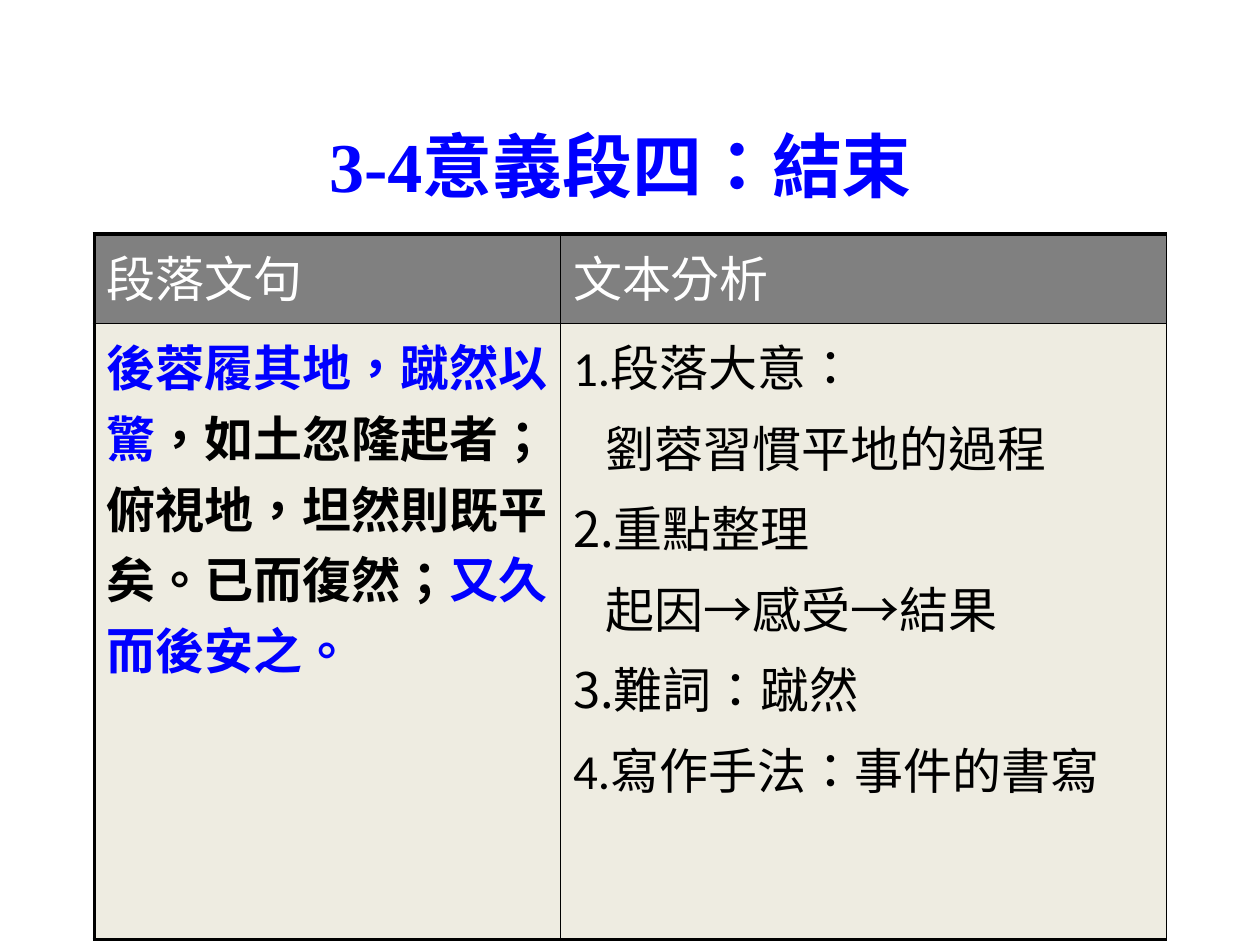
from lxml import etree
from pptx import Presentation
from pptx import util as u
from pptx.dml.color import RGBColor
from pptx.enum import lang, text
from pptx.oxml.ns import qn

C = dict(blue="0000FF", black="000000", white="FFFFFF", grey="808080", cream="EEECE1")
LATIN, CJK = "Calibri", "Noto Sans CJK SC"
THICK, THIN = 2.25, 1
INDENT = 0.66

TITLE = "3-4意義段四：結束"
HEADERS = ["段落文句", "文本分析"]
PASSAGE = [("後蓉履其地，蹴然以驚", "blue"),
           ("，如土忽隆起者；俯視地，坦然則既平矣。已而復然；", "black"),
           ("又久而後安之。", "blue")]
ANALYSIS = [(0, [("1.段落大意", LATIN), ("：", CJK)]),
            (INDENT, [("劉蓉習慣平地的過程", CJK)]),
            (0, [("2.重點整理", CJK)]),
            (INDENT, [("起因→感受→結果", CJK)]),
            (0, [("3.難詞", CJK), ("：蹴然", LATIN)]),
            (0, [("4.寫作手法：事件的書寫", LATIN)])]
COLS, ROWS = [9.4, 12.22], [1.8, 12.42]


def add_run(p, words, color, font=LATIN, size=28, bold=False):
    r = p.add_run()
    r.text = words
    f = r.font
    f.name, f.size, f.bold = font, u.Pt(size), bold
    f.color.rgb = RGBColor.from_string(C[color])
    f.language_id = lang.MSO_LANGUAGE_ID.TRADITIONAL_CHINESE


def set_borders(cell, widths):
    tcPr = cell._tc.get_or_add_tcPr()
    for i, (side, width) in enumerate(widths.items()):
        ln = etree.Element(qn(f"a:ln{side}"), w=str(u.Pt(width)))
        fill = etree.SubElement(ln, qn("a:solidFill"))
        etree.SubElement(fill, qn("a:srgbClr"), val=C["black"])
        tcPr.insert(i, ln)


prs = Presentation()
prs.slide_width, prs.slide_height = u.Cm(25.4), u.Cm(19.05)
s = prs.slides.add_slide(prs.slide_layouts[6])

tf = s.shapes.add_textbox(u.Cm(1.3), u.Cm(2.51), u.Cm(22.86), u.Cm(1.63)).text_frame
tf.word_wrap = True
tf.vertical_anchor = text.MSO_ANCHOR.MIDDLE
tf.margin_right = u.Cm(0.69)
p = tf.paragraphs[0]
p.alignment = text.PP_ALIGN.CENTER
add_run(p, TITLE, "blue", "Times New Roman", 40, True)

table = s.shapes.add_table(len(ROWS), len(COLS), u.Cm(1.9), u.Cm(4.72),
                           u.Cm(sum(COLS)), u.Cm(sum(ROWS))).table
table.first_row = table.horz_banding = False
for col, width in zip(table.columns, COLS):
    col.width = u.Cm(width)
for row, height in zip(table.rows, ROWS):
    row.height = u.Cm(height)

for i in range(len(ROWS)):
    for j in range(len(COLS)):
        cell = table.cell(i, j)
        cell.fill.solid()
        cell.fill.fore_color.rgb = RGBColor.from_string(C["cream" if i else "grey"])
        set_borders(cell, dict(L=THIN if j else THICK, R=THIN,
                               T=THIN if i else THICK, B=THICK if i else THIN))

for j, header in enumerate(HEADERS):
    add_run(table.cell(0, j).text_frame.paragraphs[0], header, "white")

for words, color in PASSAGE:
    add_run(table.cell(1, 0).text_frame.paragraphs[0], words, color, bold=True)

tf = table.cell(1, 1).text_frame
for i, (indent, runs) in enumerate(ANALYSIS):
    p = tf.add_paragraph() if i else tf.paragraphs[0]
    if i:
        p.space_before = u.Pt(5.6)
    if indent:
        p._p.get_or_add_pPr().set("marL", str(u.Cm(indent)))
    for words, font in runs:
        add_run(p, words, "black", font)

prs.save("out.pptx")
